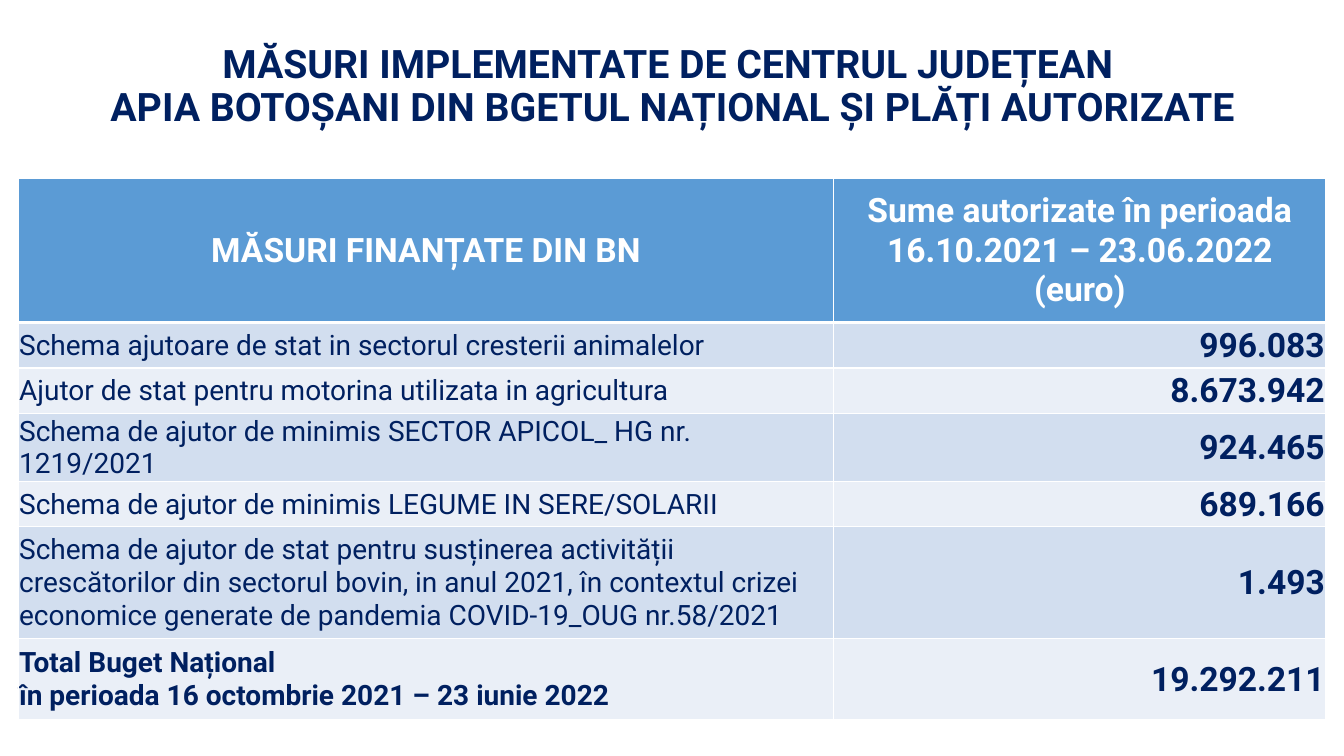
"""Build the slide of national budget measures and authorised payments."""
from lxml import etree
from pptx import Presentation
from pptx import util as u
from pptx.dml import color
from pptx.enum import text
from pptx.oxml import ns

CENTER, LEFT, RIGHT = text.PP_ALIGN.CENTER, text.PP_ALIGN.LEFT, text.PP_ALIGN.RIGHT


def rgb(value):
    return color.RGBColor.from_string(value)


def write(frame, content, size=20, hue="002060", bold=False, align=LEFT, spacing=None, font="Roboto"):
    for index, line in enumerate(content.split("\n")):
        paragraph = frame.add_paragraph() if index else frame.paragraphs[0]
        paragraph.text = line
        paragraph.alignment = align
        paragraph.line_spacing = spacing
        for run in paragraph.runs:
            run.font.name = font
            run.font.size = u.Pt(size)
            run.font.bold = bold
            run.font.color.rgb = rgb(hue)


class SlideBuilder:
    navy, white, header = "002060", "FFFFFF", "5B9BD5"
    bands = ("D2DEEF", "EAEFF7")

    def __init__(self, slide):
        self.slide = slide

    def title(self, content, left, top, width, height):
        box = self.slide.shapes.add_textbox(*map(u.Inches, (left, top, width, height)))
        frame = box.text_frame
        frame.word_wrap = True
        frame.vertical_anchor = text.MSO_ANCHOR.MIDDLE
        write(frame, content, size=28, hue=self.navy, bold=True, align=CENTER, spacing=0.9)

    def border(self, cell, side, width):
        properties = cell._tc.get_or_add_tcPr()
        line = etree.SubElement(properties, ns.qn(f"a:ln{side}"), w=str(u.Pt(width)))
        fill = etree.SubElement(line, ns.qn("a:solidFill"))
        etree.SubElement(fill, ns.qn("a:srgbClr"), val=self.white)

    def cell(self, cell, content, fill, top=1, bottom=1, tight=True, **style):
        for side, width in zip("LRTB", (1, 1, top, bottom)):
            self.border(cell, side, width)
        cell.fill.solid()
        cell.fill.fore_color.rgb = rgb(fill)
        cell.vertical_anchor = text.MSO_ANCHOR.MIDDLE
        if tight:
            cell.margin_left = cell.margin_right = cell.margin_top = u.Inches(0.01)
            cell.margin_bottom = 0
        write(cell.text_frame, content, **style)

    def table(self, headings, records, left, top, widths, heights):
        frame = self.slide.shapes.add_table(
            len(heights), len(widths),
            *map(u.Inches, (left, top, sum(widths), sum(heights))))
        table = frame.table
        for column, width in zip(table.columns, widths):
            column.width = u.Inches(width)
        for row, height in zip(table.rows, heights):
            row.height = u.Inches(height)
        for column, heading in enumerate(headings):
            self.cell(table.cell(0, column), heading, self.header, bottom=3, tight=False,
                      size=24, hue=self.white, bold=True, align=CENTER)
        for row, (measure, amount) in enumerate(records, 1):
            fill = self.bands[(row - 1) % 2]
            top_line = 3 if row == 1 else 1
            self.cell(table.cell(row, 0), measure, fill, top=top_line, bold=row == len(records))
            self.cell(table.cell(row, 1), amount, fill, top=top_line,
                      size=24, bold=True, align=RIGHT)


def main():
    presentation = Presentation()
    presentation.slide_width = u.Inches(13.33)
    presentation.slide_height = u.Inches(7.5)
    builder = SlideBuilder(presentation.slides.add_slide(presentation.slide_layouts[6]))

    builder.title("MĂSURI IMPLEMENTATE DE CENTRUL JUDEȚEAN \v"
                  "APIA BOTOȘANI DIN BGETUL NAȚIONAL ȘI PLĂȚI AUTORIZATE",
                  0.92, 0.4, 11.5, 0.93)
    headings = ("MĂSURI FINANȚATE DIN BN",
                "Sume autorizate în perioada\v16.10.2021 – 23.06.2022\n(euro)")
    records = (
        ("Schema ajutoare de stat in sectorul cresterii animalelor", "996.083"),
        ("Ajutor de stat pentru motorina utilizata in agricultura", "8.673.942"),
        ("Schema de ajutor de minimis SECTOR APICOL_ HG nr. 1219/2021", "924.465"),
        ("Schema de ajutor de minimis LEGUME IN SERE/SOLARII", "689.166"),
        ("Schema de ajutor de stat pentru susținerea activității crescătorilor din sectorul bovin, "
         "in anul 2021, în contextul crizei economice generate de pandemia COVID-19_OUG nr.58/2021",
         "1.493"),
        ("Total Buget Național\nîn perioada 16 octombrie 2021 – 23 iunie 2022", "19.292.211"),
    )
    builder.table(headings, records, 0.18, 1.77, widths=(8.09, 4.88),
                  heights=(1.43, 0.45, 0.45, 0.63, 0.45, 1.11, 0.8))
    presentation.save("out.pptx")


if __name__ == "__main__":
    main()
